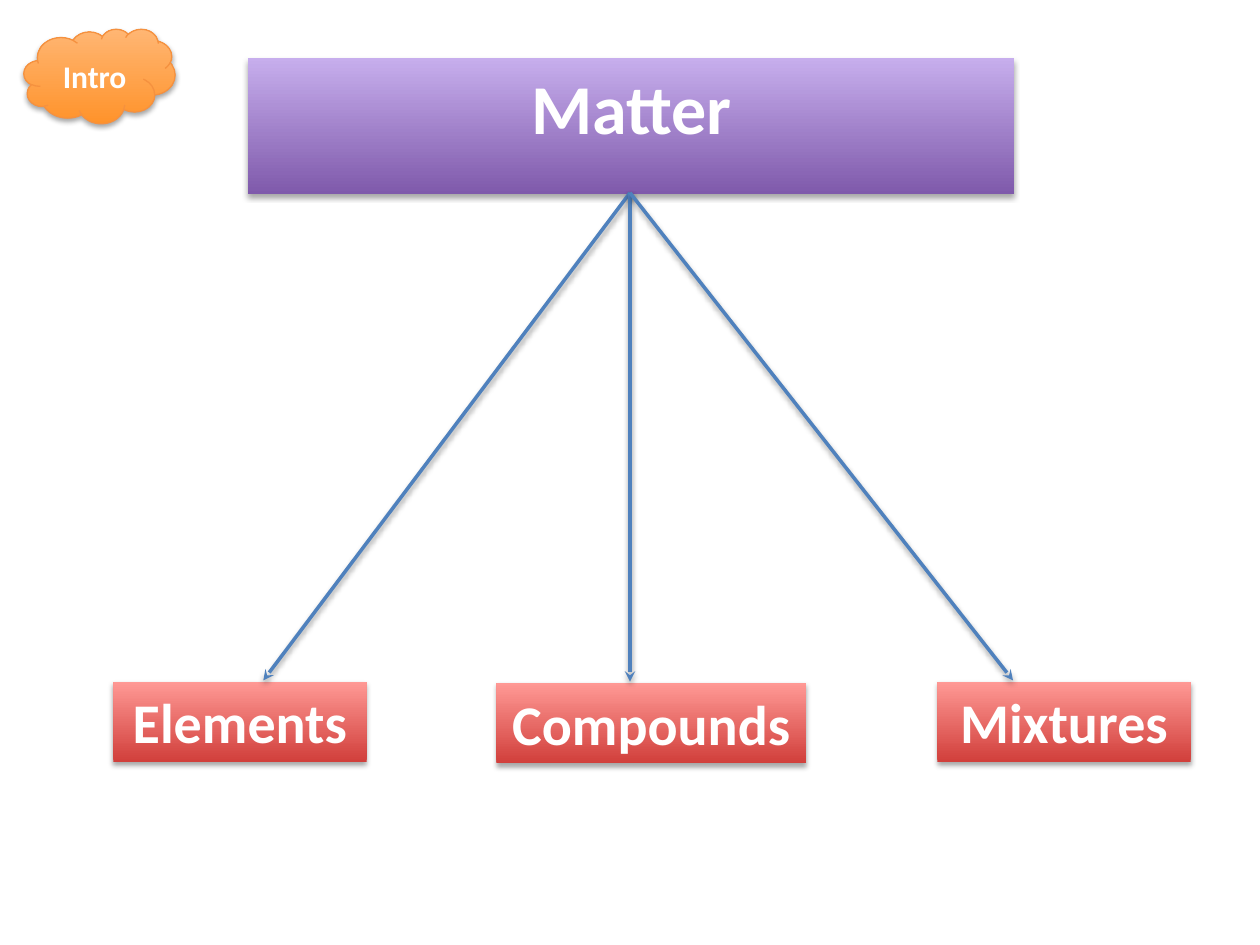
from dataclasses import dataclass

from pptx import Presentation
from pptx.dml.color import RGBColor
from pptx.enum.shapes import MSO_CONNECTOR, MSO_SHAPE
from pptx.enum.text import MSO_ANCHOR, MSO_AUTO_SIZE, PP_ALIGN
from pptx.oxml import parse_xml
from pptx.oxml.ns import nsdecls, qn
from pptx.util import Inches, Pt


@dataclass(frozen=True)
class Theme:
    """Colours, gradients from bottom to top, and type sizes of the slide."""
    font: str = "Calibri"
    text: str = "FFFFFF"
    arrow: str = "4F81BD"
    cloud_line: str = "F5913F"
    purple: tuple = ("7F5AAB", "C7AEED")
    red: tuple = ("D13F3B", "FF9995")
    orange: tuple = ("FF932B", "FFB673")
    title_size: int = 40
    label_size: int = 32
    intro_size: int = 18


THEME = Theme()


def apply(obj, values):
    """Set each named attribute on an object."""
    for name, value in values.items():
        setattr(obj, name, value)


def place(sp, left, top, width, height):
    """Position a shape, in inches."""
    box = dict(left=left, top=top, width=width, height=height)
    apply(sp, {name: Inches(value) for name, value in box.items()})


def add_shadow(sp, opacity=35, dist=1.8):
    """Give a shape or connector a soft shadow straight below it."""
    sp._element.spPr.append(parse_xml(
        f'<a:effectLst {nsdecls("a")}><a:outerShdw blurRad="{Pt(3.1)}" '
        f'dist="{Pt(dist)}" dir="5400000" rotWithShape="0">'
        f'<a:srgbClr val="000000"><a:alpha val="{opacity * 1000}"/></a:srgbClr>'
        '</a:outerShdw></a:effectLst>'))


def fill_gradient(sp, colors):
    """Fill a shape with a vertical gradient, bottom colour first."""
    sp.fill.gradient()
    sp.fill.gradient_angle = 90
    for stop, color in zip(sp.fill.gradient_stops, colors):
        stop.color.rgb = RGBColor.from_string(color)


def write(sp, text, size, align=PP_ALIGN.CENTER):
    """Write one bold line into a shape."""
    tf = sp.text_frame
    apply(tf, dict(word_wrap=True, auto_size=MSO_AUTO_SIZE.NONE,
                   vertical_anchor=MSO_ANCHOR.TOP))
    p = tf.paragraphs[0]
    p.alignment = align
    r = p.add_run()
    r.text = text
    apply(r.font, dict(name=THEME.font, size=Pt(size), bold=True))
    r.font.color.rgb = RGBColor.from_string(THEME.text)


def add_title(s, text, box):
    """Turn the title placeholder into the top banner."""
    sp = s.shapes.title
    place(sp, *box)
    fill_gradient(sp, THEME.purple)
    add_shadow(sp)
    write(sp, text, THEME.title_size)


def add_label(s, text, box):
    """Add a red box naming one kind of matter."""
    sp = s.shapes.add_textbox(*map(Inches, box))
    fill_gradient(sp, THEME.red)
    add_shadow(sp)
    write(sp, text, THEME.label_size)


def add_arrow(s, start, end):
    """Add an arrow between two points."""
    c = s.shapes.add_connector(MSO_CONNECTOR.STRAIGHT, *map(Inches, start + end))
    c.line.color.rgb = RGBColor.from_string(THEME.arrow)
    c.line.width = Pt(2)
    c._element.spPr.find(qn("a:ln")).append(
        parse_xml(f'<a:tailEnd {nsdecls("a")} type="stealth"/>'))
    add_shadow(c, opacity=38, dist=1.6)


def add_intro(s, text, cloud_box, text_box):
    """Add the corner cloud and its caption."""
    sp = s.shapes.add_shape(MSO_SHAPE.CLOUD, *map(Inches, cloud_box))
    fill_gradient(sp, THEME.orange)
    sp.line.color.rgb = RGBColor.from_string(THEME.cloud_line)
    sp.line.width = Pt(0.75)
    add_shadow(sp)
    caption = s.shapes.add_textbox(*map(Inches, text_box))
    write(caption, text, THEME.intro_size, PP_ALIGN.LEFT)


def main():
    """Build the matter diagram."""
    prs = Presentation()
    apply(prs, dict(slide_width=Inches(10), slide_height=Inches(7.5)))
    s = prs.slides.add_slide(prs.slide_layouts[5])
    add_title(s, "Matter", (1.97, 0.46, 6.08, 1.08))
    kinds = (("Elements", 0.9, 5.41, 2.01), ("Compounds", 3.94, 5.42, 2.46),
             ("Mixtures", 7.44, 5.41, 2.01))
    for text, left, top, width in kinds:
        add_label(s, text, (left, top, width, 0.64))
    for end in ((2.09, 5.4), (5, 5.41), (8.04, 5.4)):
        add_arrow(s, (5, 1.53), end)
    add_intro(s, "Intro", (0.19, 0.23, 1.2, 0.75), (0.4, 0.4, 0.77, 0.4))
    prs.save("out.pptx")


if __name__ == "__main__":
    main()
